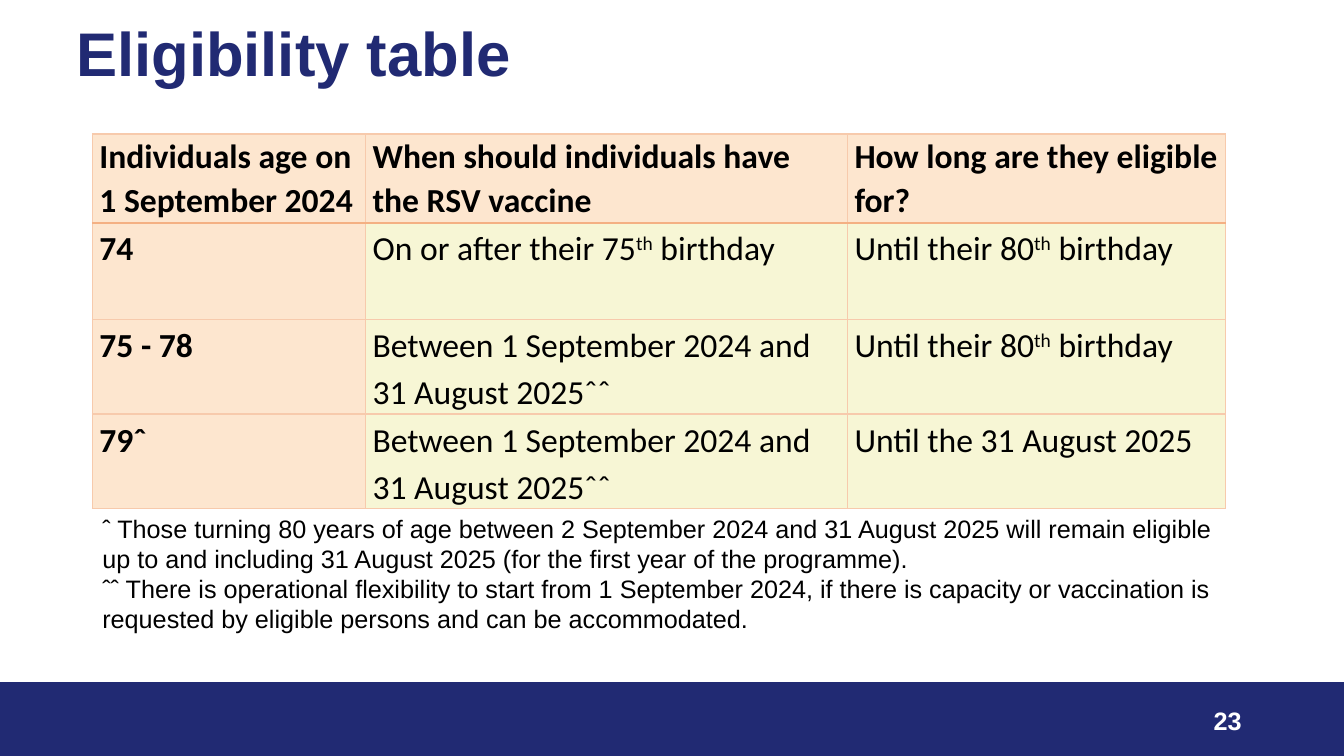
from lxml.etree import SubElement
from pptx import Presentation
from pptx.dml.color import RGBColor as Rgb
from pptx.enum.shapes import MSO_SHAPE as Preset
from pptx.enum.text import MSO_ANCHOR as Anchor, PP_ALIGN as Align
from pptx.oxml.ns import qn
from pptx.util import Inches, Pt

COLORS = {
    "navy": "212A73",
    "white": "FFFFFF",
    "black": "000000",
    "peach": "FDE6CF",
    "cream": "F7F6D5",
    "rule": "F7CAAC",
    "header_rule": "F4B083",
}
GRID_COLUMNS, GRID_ROWS = 160, 90


class SlideBuilder:
    body_font = "Arial"
    table_font = "Calibri"

    def __init__(self, deck):
        self.slide = deck.slides.add_slide(deck.slide_layouts[6])
        self.column = deck.slide_width / GRID_COLUMNS
        self.row = deck.slide_height / GRID_ROWS

    def across(self, columns):
        return round(columns * self.column)

    def down(self, rows):
        return round(rows * self.row)

    def area(self, left, top, width, height):
        return self.across(left), self.down(top), self.across(width), self.down(height)

    def color(self, name):
        return Rgb.from_string(COLORS[name])

    def add_runs(self, paragraph, text, size, color, bold, font):
        for index, part in enumerate(text.split("|")):
            run = paragraph.add_run()
            run.text = part
            run.font.size = Pt(size)
            run.font.name = font
            run.font.bold = bold
            run.font.color.rgb = self.color(color)
            if index % 2:
                run._r.get_or_add_rPr().set("baseline", "30000")

    def band(self, area, color):
        band = self.slide.shapes.add_shape(Preset.RECTANGLE, *self.area(*area))
        band.shadow.inherit = False
        band.fill.solid()
        band.fill.fore_color.rgb = self.color(color)
        band.line.color.rgb = self.color(color)
        band.line.width = Pt(1)

    def text(self, area, lines, size, color="black", bold=False,
             align=Align.LEFT, anchor=Anchor.MIDDLE, spacing=1.0):
        frame = self.slide.shapes.add_textbox(*self.area(*area)).text_frame
        frame.word_wrap = True
        frame.vertical_anchor = anchor
        for index, line in enumerate(lines):
            paragraph = frame.add_paragraph() if index else frame.paragraphs[0]
            paragraph.alignment = align
            paragraph.line_spacing = spacing
            self.add_runs(paragraph, line, size, color, bold, self.body_font)

    def border(self, cell, side, color, width):
        edge = SubElement(cell._tc.get_or_add_tcPr(), qn(f"a:ln{side}"), w=str(Pt(width)))
        fill = SubElement(edge, qn("a:solidFill"))
        SubElement(fill, qn("a:srgbClr"), val=COLORS[color])

    def cell(self, cell, text, row, column):
        heading = row == 0 or column == 0
        cell.margin_left = cell.margin_right = Inches(0.07)
        cell.margin_top = cell.margin_bottom = 0
        paragraph = cell.text_frame.paragraphs[0]
        paragraph.line_spacing = 1.15 if row else 1.07
        paragraph.space_after = Pt(8)
        self.add_runs(paragraph, text, 24, "black", heading, self.table_font)
        for side in "LRTB":
            under_header = (row, side) in ((0, "B"), (1, "T"))
            self.border(cell, side, *(("header_rule", 1.5) if under_header else ("rule", 1)))
        cell.fill.solid()
        cell.fill.fore_color.rgb = self.color("peach" if heading else "cream")

    def table(self, left, top, widths, heights, rows):
        area = self.area(left, top, sum(widths), sum(heights))
        table = self.slide.shapes.add_table(len(heights), len(widths), *area).table
        table.horz_banding = False
        for column, width in zip(table.columns, widths):
            column.width = self.across(width)
        for row, height in zip(table.rows, heights):
            row.height = self.down(height)
        for r, texts in enumerate(rows):
            for c, text in enumerate(texts):
                self.cell(table.cell(r, c), text, r, c)


def main():
    deck = Presentation()
    deck.slide_width, deck.slide_height = Inches(13.33), Inches(7.5)
    page = SlideBuilder(deck)

    page.band((0, 81.24, 160, 8.76), "navy")
    page.text((7.92, 1.8, 138, 9.84), ["Eligibility table"], 44, "navy", True, spacing=0.9)
    page.text((113, 83.4, 36, 4.8), ["23"], 18, "white", True, Align.RIGHT)
    page.text((11, 60.48, 138, 15.72), [
        "ˆ Those turning 80 years of age between 2 September 2024 and 31 August 2025 "
        "will remain eligible up to and including 31 August 2025 "
        "(for the first year of the programme).",
        "ˆˆ There is operational flexibility to start from 1 September 2024, "
        "if there is capacity or vaccination is requested by eligible persons "
        "and can be accommodated.",
    ], 18, anchor=Anchor.TOP)

    catch_up = "Between 1 September 2024 and 31 August 2025ˆˆ"
    until_80 = "Until their 80|th| birthday"
    page.table(11, 15.96, (32.52, 57.38, 45), (10.56, 11.5, 11.28, 11.28), (
        ("Individuals age on 1 September 2024",
         "When should individuals have the RSV vaccine",
         "How long are they eligible for?"),
        ("74", "On or after their 75|th| birthday", until_80),
        ("75 - 78", catch_up, until_80),
        ("79ˆ", catch_up, "Until the 31 August 2025"),
    ))
    deck.save("out.pptx")


if __name__ == "__main__":
    main()
